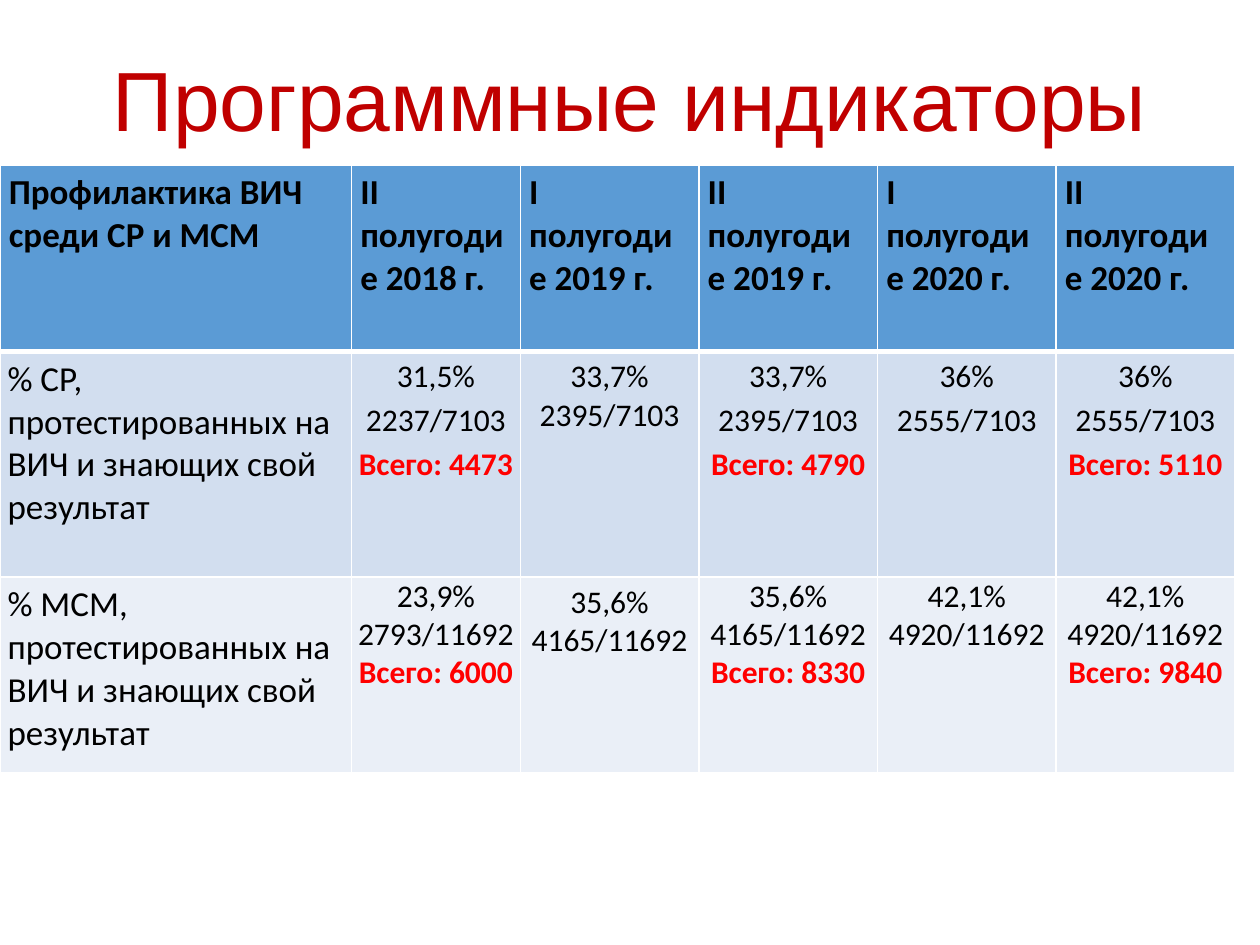
from lxml.etree import SubElement
from pptx import Presentation
from pptx.dml.color import RGBColor
from pptx.enum.text import MSO_ANCHOR, PP_ALIGN
from pptx.oxml.ns import qn
from pptx.util import Inches, Pt

BLACK = RGBColor(0x00, 0x00, 0x00)
WHITE = RGBColor(0xFF, 0xFF, 0xFF)
TITLE_RED = RGBColor(0xC0, 0x00, 0x00)
TOTAL_RED = RGBColor(0xFF, 0x00, 0x00)
HEADER_BLUE = RGBColor(0x5B, 0x9B, 0xD5)
BAND_FILLS = [RGBColor(0xD2, 0xDE, 0xEF), RGBColor(0xEA, 0xEF, 0xF7)]

TITLE_BOX = (0.69, -0.19, 8.62, 2.04)
TABLE_BOX = (0, 1.31, 9.8, 4.83)
LABEL_WIDTH, FIRST_PERIOD_WIDTH = 2.79, 1.34
ROW_HEIGHTS = (1.48, 1.79, 1.55)

WIDE_INSETS = (0.07, 0.05)
LABEL_INSETS = (0.06, 0.05)
TIGHT_INSETS = (0.05, 0)
OPEN_COLUMN = 2  # values here keep wide insets and single spacing

TOTAL_WORD = "Всего"
HEADERS = ["Профилактика ВИЧ среди CР и МСМ"] + [
    f"{half} полугодие {year} г."
    for half, year in [("II", 2018), ("I", 2019), ("II", 2019), ("I", 2020), ("II", 2020)]
]
INDICATORS = [
    ("% СР, протестированных на ВИЧ и знающих свой результат", 1.15, [
        "31,5%\n2237/7103\nВсего: 4473",
        "33,7%\n2395/7103",
        "33,7%\n2395/7103\nВсего: 4790",
        "36%\n2555/7103",
        "36%\n2555/7103\nВсего: 5110",
    ]),
    ("% МСМ, протестированных на ВИЧ и знающих свой результат", 1.0, [
        "23,9%\n2793/11692\nВсего: 6000",
        "35,6%\n4165/11692",
        "35,6%\n4165/11692\nВсего: 8330",
        "42,1%\n4920/11692",
        "42,1%\n4920/11692\nВсего: 9840",
    ]),
]


def style_para(para, font_name, size, color, bold=False, align=PP_ALIGN.LEFT, spacing=1.0):
    para.alignment = align
    para.line_spacing = spacing
    for span in para.runs:
        span.font.name = font_name
        span.font.size = Pt(size)
        span.font.bold = bold
        span.font.color.rgb = color


def set_borders(cell, **widths):
    """Draw white borders; widths in points are keyed by side: L, R, T, B."""
    properties = cell._tc.get_or_add_tcPr()
    for position, side in enumerate("LRTB"):
        line = SubElement(properties, qn(f"a:ln{side}"), w=str(Pt(widths.get(side, 1))))
        fill = SubElement(line, qn("a:solidFill"))
        SubElement(fill, qn("a:srgbClr"), val=str(WHITE))
        properties.remove(line)
        properties.insert(position, line)


def fill_cell(cell, text, fill, insets, **borders):
    cell.text_frame.text = text
    cell.margin_left = cell.margin_right = Inches(insets[0])
    cell.margin_top = cell.margin_bottom = Inches(insets[1])
    cell.vertical_anchor = MSO_ANCHOR.TOP
    cell.fill.solid()
    cell.fill.fore_color.rgb = fill
    set_borders(cell, **borders)
    return cell.text_frame.paragraphs


def add_title(page, box):
    frame = page.shapes.add_textbox(*map(Inches, box)).text_frame
    frame.word_wrap = True
    frame.vertical_anchor = MSO_ANCHOR.MIDDLE
    frame.text = "Программные индикаторы"
    style_para(frame.paragraphs[0], "Arial", 48, TITLE_RED,
               align=PP_ALIGN.CENTER, spacing=0.9)


def add_header_row(table):
    for column, header in enumerate(HEADERS):
        for para in fill_cell(table.cell(0, column), header, HEADER_BLUE, WIDE_INSETS, B=3):
            style_para(para, "Calibri", 20, BLACK, bold=True)


def add_indicator_row(table, row, label, spacing, values):
    fill = BAND_FILLS[row - 1]
    top = 3 if row == 1 else 1
    for para in fill_cell(table.cell(row, 0), label, fill, LABEL_INSETS, T=top):
        style_para(para, "Calibri", 20, BLACK)
    for column, value in enumerate(values, start=1):
        is_open = column == OPEN_COLUMN
        insets = WIDE_INSETS if is_open else TIGHT_INSETS
        for para in fill_cell(table.cell(row, column), value, fill, insets, T=top):
            is_total = para.text.startswith(TOTAL_WORD)
            style_para(para, "Calibri", 18, TOTAL_RED if is_total else BLACK, is_total,
                       PP_ALIGN.CENTER, 1.0 if is_open else spacing)


def add_indicator_table(page, box):
    table = page.shapes.add_table(len(ROW_HEIGHTS), len(HEADERS), *map(Inches, box)).table
    period_count = len(HEADERS) - 2
    period_width = (box[2] - LABEL_WIDTH - FIRST_PERIOD_WIDTH) / period_count
    widths = [LABEL_WIDTH, FIRST_PERIOD_WIDTH] + [period_width] * period_count
    for column, width in zip(table.columns, widths):
        column.width = Inches(width)
    for row, height in zip(table.rows, ROW_HEIGHTS):
        row.height = Inches(height)
    add_header_row(table)
    for row, indicator in enumerate(INDICATORS, start=1):
        add_indicator_row(table, row, *indicator)


def main():
    deck = Presentation()
    deck.slide_width, deck.slide_height = Inches(10), Inches(7.5)
    page = deck.slides.add_slide(deck.slide_layouts[6])
    add_title(page, TITLE_BOX)
    add_indicator_table(page, TABLE_BOX)
    deck.save("out.pptx")


if __name__ == "__main__":
    main()
